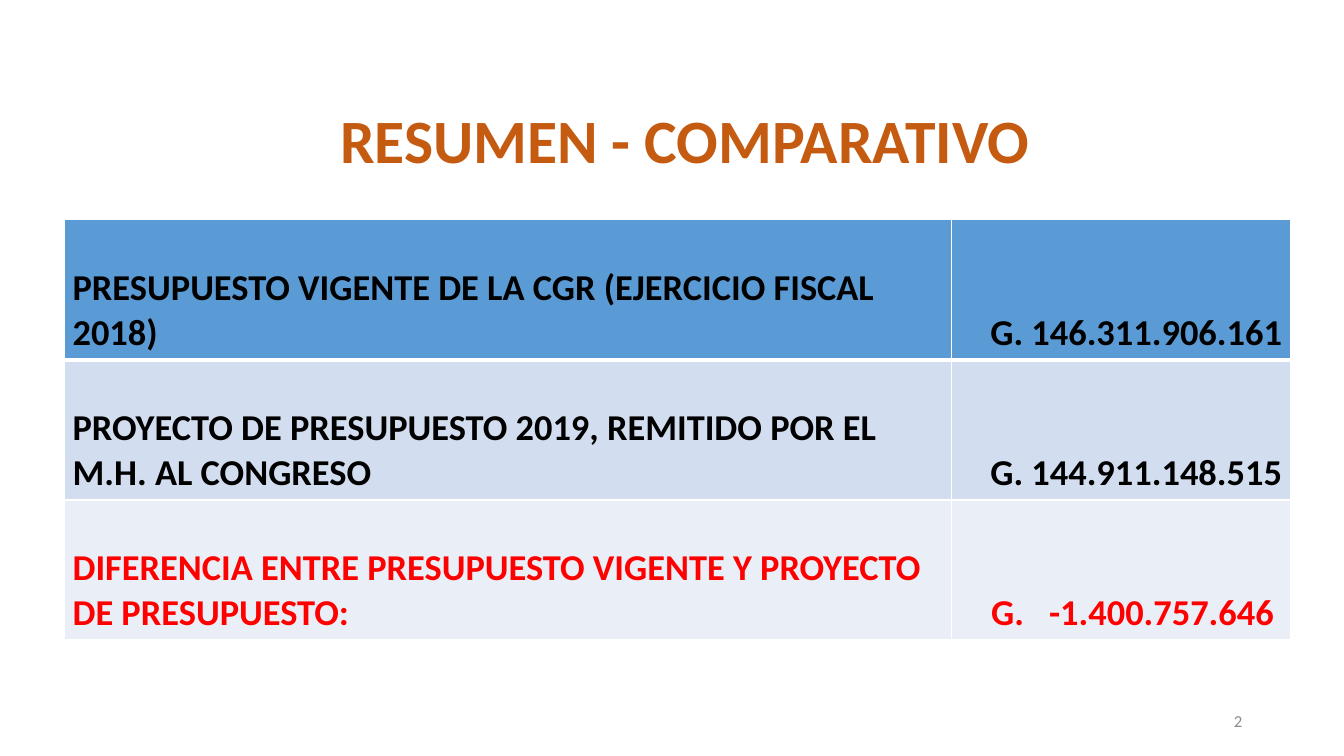
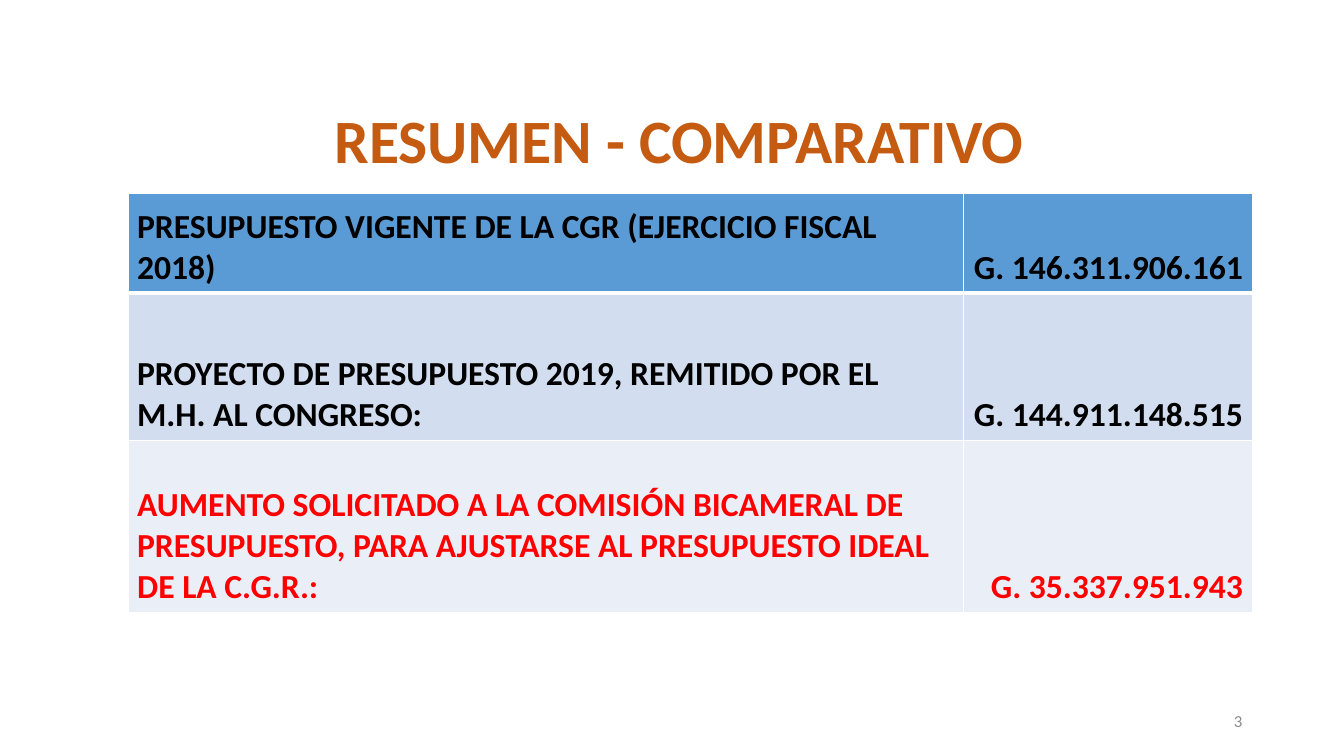
from lxml import etree
from pptx import Presentation, util as u
from pptx.dml.color import RGBColor
from pptx.enum import text as t
from pptx.oxml.ns import qn

FONT = "Calibri"
COL = {"title": "C55A11", "ink": "000000", "alert": "FF0000",
       "page": "8C8C8C", "line": "FFFFFF"}
FILLS = ["5B9BD5", "D2DEEF", "EAEFF7"]
INKS = ["ink", "ink", "alert"]
LEFT, RIGHT, MID = t.PP_ALIGN.LEFT, t.PP_ALIGN.RIGHT, t.PP_ALIGN.CENTER


class Deck:
    def __init__(self):
        self.prs = Presentation()
        self.prs.slide_width = u.Inches(13.33)
        self.prs.slide_height = u.Inches(7.5)
        self.slide = None

    def new(self):
        self.slide = self.prs.slides.add_slide(self.prs.slide_layouts[6])

    def add_runs(self, para, runs, size, color, bold, align):
        """Each run is a text, or a (text, tracking in points) pair."""
        para.alignment = align
        for item in runs:
            words, track = (item, 0) if isinstance(item, str) else item
            run = para.add_run()
            run.text = words
            font = run.font
            font.name, font.size, font.bold = FONT, u.Pt(size), bold
            font.color.rgb = RGBColor.from_string(COL[color])
            if track:
                run._r.get_or_add_rPr().set("spc", str(track * 100))

    def label(self, box, words, size, color, bold, align):
        frame = self.slide.shapes.add_textbox(*map(u.Inches, box)).text_frame
        frame.word_wrap = True
        frame.vertical_anchor = t.MSO_ANCHOR.MIDDLE
        para = frame.paragraphs[0]
        self.add_runs(para, [words], size, color, bold, align)
        return para

    def title(self, box, words):
        self.label(box, words, 44, "title", True, MID).line_spacing = 0.9

    def page(self, num):
        self.label((9.42, 6.95, 3, 0.4), str(num), 12, "page", False, RIGHT)

    def border(self, cell, side, width):
        line = etree.SubElement(cell._tc.get_or_add_tcPr(), qn("a:ln" + side),
                                w=str(u.Pt(width)))
        fill = etree.SubElement(line, qn("a:solidFill"))
        etree.SubElement(fill, qn("a:srgbClr"), val=COL["line"])

    def table(self, left, top, cols, high, rows, size, pad):
        box = map(u.Inches, (left, top, sum(cols), sum(high)))
        grid = self.slide.shapes.add_table(len(rows), len(cols), *box).table
        for col, width in zip(grid.columns, cols):
            col.width = u.Inches(width)
        for i, row in enumerate(rows):
            grid.rows[i].height = u.Inches(high[i])
            for j, runs in enumerate(row):
                cell = grid.cell(i, j)
                # A thick rule parts the first row from the rest
                for side in "LRTB":
                    thick = (i, side) in ((0, "B"), (1, "T"))
                    self.border(cell, side, 3 if thick else 1)
                cell.fill.solid()
                cell.fill.fore_color.rgb = RGBColor.from_string(FILLS[i])
                cell.vertical_anchor = t.MSO_ANCHOR.BOTTOM
                cell.margin_left = cell.margin_right = u.Inches(pad)
                cell.margin_top = cell.margin_bottom = u.Inches(0.05)
                self.add_runs(cell.text_frame.paragraphs[0], runs, size,
                              INKS[i], True, RIGHT if j else LEFT)


def main():
    deck = Deck()
    now = (["PRESUPUESTO VIGENTE DE LA CGR (EJERCICIO FISCAL 2018)"],
           ["G. 146.311.906.161"])
    plan = "PROYECTO DE PRESUPUESTO 2019, REMITIDO POR EL M.H. AL CONGRESO"
    sum_plan = ["G. 144.911.148.515"]

    # Current budget against the draft
    deck.new()
    deck.title((1.17, 1, 11.25, 0.85), "RESUMEN - COMPARATIVO")
    deck.table(0.64, 2.18, (8.8, 3.36), [1.39] * 3, [
        now,
        ([plan], sum_plan),
        (["DIFERENCIA ENTRE PRESUPUESTO VIGENTE Y PROYECTO DE PRESUPUESTO:"],
         ["G.", (" ", 12), "-1.400.757.646 "]),
    ], 26, 0.08)
    deck.page(2)

    # Increase requested
    deck.new()
    deck.title((0.92, 0.99, 11.5, 0.86), " RESUMEN - COMPARATIVO")
    deck.table(1.27, 1.92, (8.29, 2.86), (0.99, 1.46, 1.71), [
        now,
        ([plan + ":"], sum_plan),
        (["AUMENTO SOLICITADO A LA COMISIÓN BICAMERAL DE PRESUPUESTO, "
          "PARA AJUSTARSE AL PRESUPUESTO IDEAL DE LA C.G.R.:"],
         ["G. 35.337.951.943"]),
    ], 24, 0.09)
    deck.page(3)

    deck.prs.save("out.pptx")


if __name__ == "__main__":
    main()
